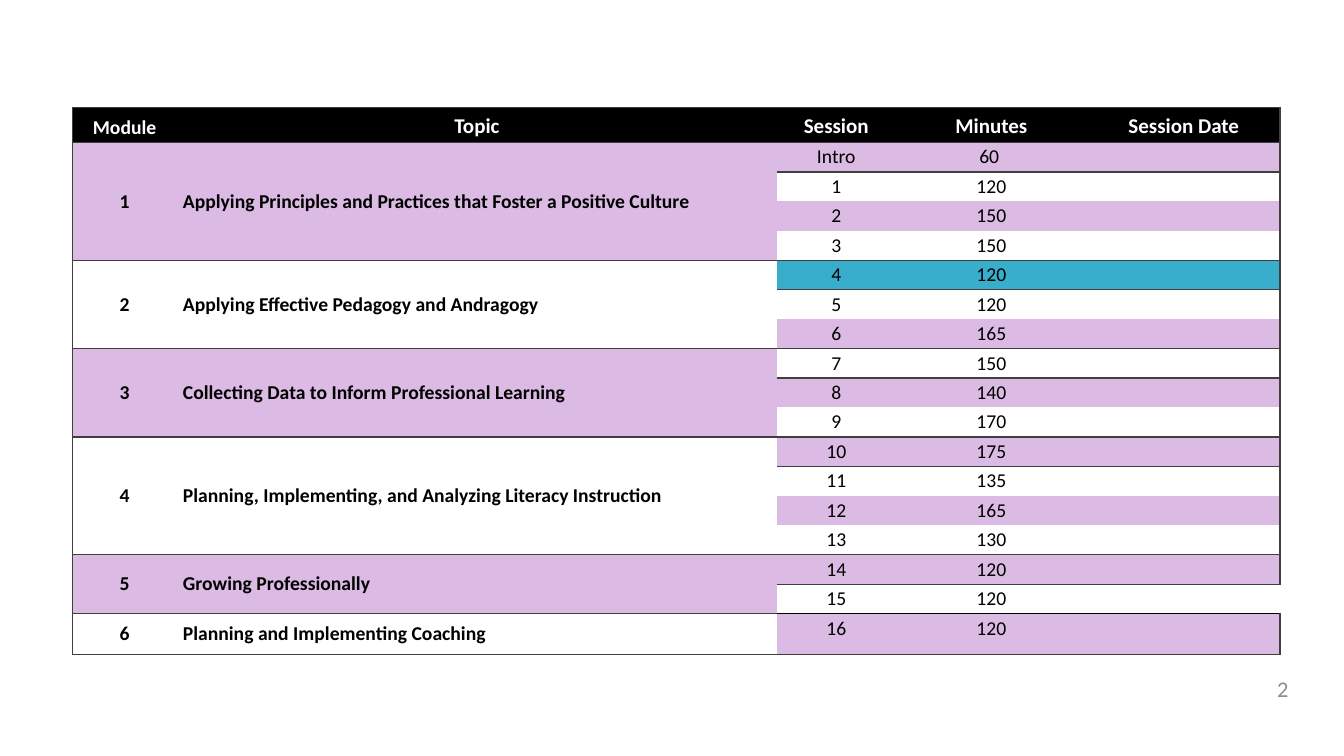
from lxml.etree import SubElement
from pptx import Presentation
from pptx.dml.color import RGBColor
from pptx.enum.text import MSO_ANCHOR as ANCHOR, PP_ALIGN as ALIGN
from pptx.oxml.ns import qn
from pptx.util import Cm, Pt

# Content
HEADERS = ["Module", "Topic", "Session", "Minutes", "Session Date"]
MODULES = [
    ("Applying Principles and Practices that Foster a Positive Culture",
     [("Intro", "60 "), ("1", "120"), ("2", "150"), ("3", "150")]),
    ("Applying Effective Pedagogy and Andragogy",
     [("4", "120"), ("5", "120"), ("6", "165")]),
    ("Collecting Data to Inform Professional Learning",
     [("7", "150"), ("8", "140"), ("9", "170")]),
    ("Planning, Implementing, and Analyzing Literacy Instruction",
     [("10", "175"), ("11", "135"), ("12", "165"), ("13", "130")]),
    ("Growing Professionally", [("14", "120"), ("15", "120")]),
    ("Planning and Implementing Coaching", [("16", "120")]),
]
HIGHLIGHTED = "4"
OPEN_RIGHT = "15"  # session row without a right border
PAGE = "2"

# Style
FONT = "Calibri"
BLACK = RGBColor(0x00, 0x00, 0x00)
WHITE = RGBColor(0xFF, 0xFF, 0xFF)
LILAC = RGBColor(0xDB, 0xBB, 0xE3)
BLUE = RGBColor(0x38, 0xAE, 0xCC)
LINE = RGBColor(0x3F, 0x3F, 0x3F)
GREY = RGBColor(0x8C, 0x8C, 0x8C)
NO_STYLE = "{2D5ABB26-0587-4C30-8999-92F81FD0307C}"

# Layout in cm
LEFT, TOP = 1.83, 2.7
COLS = [2.62, 15.14, 2.97, 4.85, 4.85]
HEAD_H, ROW_H, LAST_H = 0.89, 0.74, 1.04


def write(tf, text, size=14, bold=False, color=BLACK, align=ALIGN.CENTER):
    p = tf.paragraphs[0]
    p.alignment = align
    if text:
        r = p.add_run()
        r.text = text
        r.font.name, r.font.size, r.font.bold = FONT, Pt(size), bold
        r.font.color.rgb = color
    else:  # keeps an empty cell from growing its row
        SubElement(p._p, qn("a:endParaRPr"), sz=str(size * 100))


def dress(cell, fill, borders, anchor=ANCHOR.TOP):
    """borders maps sides L, R, T, B to colours."""
    cell.margin_left = cell.margin_right = Cm(0.16)
    cell.margin_top = cell.margin_bottom = Cm(0.07)
    cell.vertical_anchor = anchor
    tc_pr = cell._tc.get_or_add_tcPr()
    for side in "LRTB":
        if side in borders:
            ln = SubElement(tc_pr, qn(f"a:ln{side}"), w=str(Pt(1)))
            solid = SubElement(ln, qn("a:solidFill"))
            SubElement(solid, qn("a:srgbClr"), val=str(borders[side]))
    cell.fill.solid()
    cell.fill.fore_color.rgb = fill


prs = Presentation()
prs.slide_width, prs.slide_height = Cm(33.87), Cm(19.05)
s = prs.slides.add_slide(prs.slide_layouts[6])

# Table grid
n_sessions = sum(len(sessions) for _, sessions in MODULES)
heights = [HEAD_H] + [ROW_H] * (n_sessions - 1) + [LAST_H]
table = s.shapes.add_table(len(heights), len(COLS), Cm(LEFT), Cm(TOP),
                           Cm(sum(COLS)), Cm(sum(heights))).table
table.first_row = table.horz_banding = False
table._tbl.tblPr.find(qn("a:tableStyleId")).text = NO_STYLE
for col, width in zip(table.columns, COLS):
    col.width = Cm(width)
for row, height in zip(table.rows, heights):
    row.height = Cm(height)

# Header row
for c, title in enumerate(HEADERS):
    cell = table.cell(0, c)
    borders = {"T": LINE, "B": LINE}
    if c == 0:
        borders["L"] = LINE
    if c == len(COLS) - 1:
        borders["R"] = LINE
    write(cell.text_frame, title, size=15 if c else 14, bold=True, color=WHITE)
    dress(cell, BLACK, borders, ANCHOR.BOTTOM)

# Modules and their sessions
first = 1
for m, (topic, sessions) in enumerate(MODULES):
    last = first + len(sessions) - 1
    for r, (session, minutes) in enumerate(sessions, first):
        # Module number and topic, merged over the sessions
        for c, text in enumerate([str(m + 1), topic]):
            cell = table.cell(r, c)
            borders = {"T": LINE, "B": LINE} if r == first else {}
            if r == last:
                borders["B"] = LINE
            if c == 0:
                borders["L"] = LINE
            write(cell.text_frame, text if r == first else "", bold=True,
                  align=ALIGN.LEFT if c else ALIGN.CENTER)
            dress(cell, WHITE if m % 2 else LILAC, borders, ANCHOR.MIDDLE)

        # Session, minutes and date
        band = LILAC if r % 2 else WHITE
        fill = BLUE if session == HIGHLIGHTED else band
        for c, text in enumerate([session, minutes, ""], 2):
            cell = table.cell(r, c)
            borders = {}
            if r == first:
                borders["T"] = BLACK if m == len(MODULES) - 1 else LINE
            if r == last:
                borders["B"] = BLACK if m == len(MODULES) - 2 else LINE
            if c == len(COLS) - 1 and session != OPEN_RIGHT:
                borders["R"] = LINE
            write(cell.text_frame, text)
            dress(cell, fill, borders)
    if last > first:
        for c in range(2):
            table.cell(first, c).merge(table.cell(last, c))
    first = last + 1

# Page number
tf = s.shapes.add_textbox(Cm(26.8), Cm(16.97), Cm(5.92), Cm(0.76)).text_frame
tf.word_wrap = True
tf.vertical_anchor = ANCHOR.MIDDLE
write(tf, PAGE, size=16, color=GREY, align=ALIGN.RIGHT)

prs.save("out.pptx")
